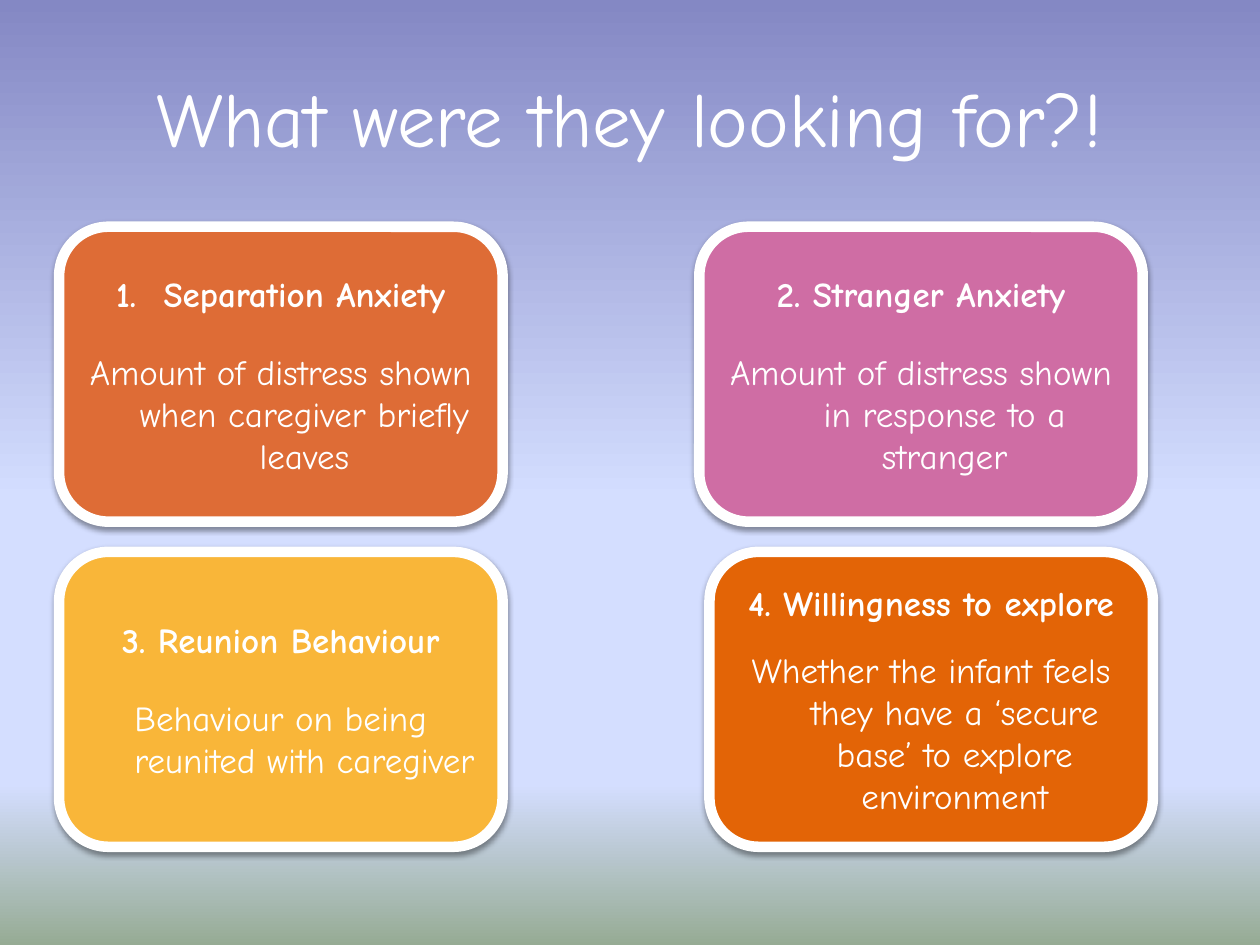
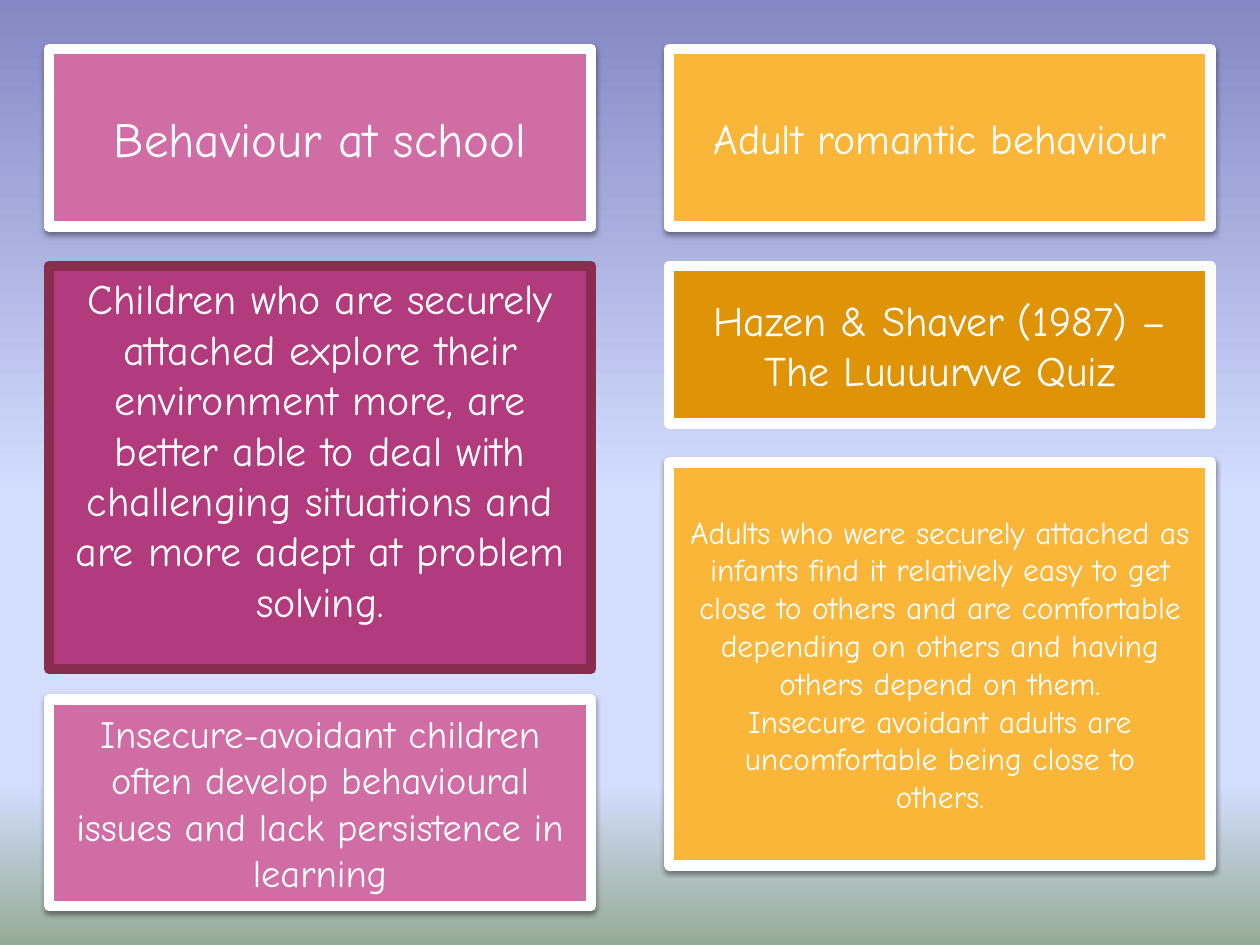
from lxml.etree import SubElement
from pptx import Presentation
from pptx.dml.color import RGBColor
from pptx.enum.shapes import MSO_SHAPE
from pptx.enum.text import MSO_ANCHOR, PP_ALIGN
from pptx.oxml.ns import qn
from pptx.util import Pt

FONT = "Comic Neue"
COLOURS = {
    "white": "FFFFFF",
    "shadow": "000000",
    "orange": "DE6C36",
    "deep orange": "E36406",
    "pink": "CF6DA4",
    "plum": "B23B7E",
    "wine": "882D4D",
    "yellow": "F9B639",
    "amber": "DF9307",
}
SKY = [(0, "8488C4"), (53, "D4DEFF"), (83, "D4DEFF"), (100, "96AB94")]

TITLE = "What were they looking for?!"
CARD_SIZE = (253.4, 168.5)
CARD_ROWS = (129.6, 315.4)
CARD_INDENT = 27
CARDS = [
    dict(left=33.8, row=0, fill="orange", heading="Separation Anxiety", numbered=True, gap=20.7,
         body="Amount of distress shown when caregiver briefly leaves"),
    dict(left=33.8, row=1, fill="yellow", heading="3. Reunion Behaviour", gap=20.7,
         body="Behaviour on being reunited with caregiver"),
    dict(left=405.4, row=1, fill="deep orange", heading="4. Willingness to explore", gap=14.3,
         body="Whether the infant feels they have a ‘secure base’ to explore environment"),
    dict(left=399.6, row=0, fill="pink", heading="2. Stranger Anxiety", gap=20.7,
         body="Amount of distress shown in response to a stranger"),
]

PANEL_TOP = 28.1
PANEL_WIDTH = 309.6
PANEL_GAP = 22.3
COLUMNS = [
    (28.1, [
        dict(height=101.5, fill="pink", size=28, lines=["Behaviour at school"]),
        dict(height=230.4, fill="plum", line="wine", size=24, shadow=False, gap=17.3, bottom_inset=24.3,
             lines=["Children who are securely attached explore their environment more, are better able "
                    "to deal with challenging situations and are more adept at problem solving."]),
        dict(height=118.1, fill="pink", size=22,
             lines=["Insecure-avoidant children often develop behavioural issues and lack persistence "
                    "in learning"]),
    ]),
    (382.3, [
        dict(height=101.5, fill="yellow", size=24, lines=["Adult romantic behaviour"]),
        dict(height=90, fill="amber", size=24, shadow=False,
             lines=["Hazen & Shaver (1987) – The Luuuurvve Quiz"]),
        dict(height=230.4, fill="yellow", size=18,
             lines=["Adults who were securely attached as infants find it relatively easy to get close to "
                    "others and are comfortable depending on others and having others depend on them.",
                    "Insecure avoidant adults are uncomfortable being close to",
                    "others."]),
    ]),
]


def colour(name):
    return RGBColor.from_string(COLOURS[name])


def add_slide(presentation):
    slide = presentation.slides.add_slide(presentation.slide_layouts[6])
    fill = slide.background.fill
    fill.gradient()
    fill.gradient_angle = 270
    stops = slide.element.find(".//" + qn("a:gsLst"))
    stops.clear()
    for percent, value in SKY:
        stop = SubElement(stops, qn("a:gs"), pos=str(percent * 1000))
        SubElement(stop, qn("a:srgbClr"), val=value)
    return slide


def add_shadow(shape):
    effects = shape.element.spPr.find(qn("a:effectLst"))
    shadow = SubElement(effects, qn("a:outerShdw"), blurRad=str(Pt(3.1)), dist=str(Pt(1.6)),
                        dir="5400000", rotWithShape="0")
    shade = SubElement(shadow, qn("a:srgbClr"), val=COLOURS["shadow"])
    SubElement(shade, qn("a:alpha"), val="38000")


def add_box(slide, preset, box, fill, line="white", shadow=True):
    shape = slide.shapes.add_shape(preset, *map(Pt, box))
    shape.fill.solid()
    shape.fill.fore_color.rgb = colour(fill)
    shape.line.color.rgb = colour(line)
    shape.line.width = Pt(6)
    shape.shadow.inherit = False
    if shadow:
        add_shadow(shape)
    return shape


def write_lines(shape, lines, size):
    frame = shape.text_frame
    frame.word_wrap = True
    frame.vertical_anchor = MSO_ANCHOR.MIDDLE
    frame.text = "\n".join(lines)
    for paragraph in frame.paragraphs:
        paragraph.alignment = PP_ALIGN.CENTER
        paragraph.font.name = FONT
        paragraph.font.size = Pt(size)
        paragraph.font.color.rgb = colour("white")
    return frame.paragraphs


def add_card(slide, card):
    box = (card["left"], CARD_ROWS[card["row"]], *CARD_SIZE)
    shape = add_box(slide, MSO_SHAPE.ROUNDED_RECTANGLE, box, card["fill"])
    heading, body = write_lines(shape, [card["heading"], card["body"]], 20)
    heading.font.bold = True
    body.space_before = Pt(card["gap"])
    for paragraph in (heading, body):
        properties = paragraph._p.get_or_add_pPr()
        properties.set("marL", str(Pt(CARD_INDENT)))
        properties.set("indent", str(-Pt(CARD_INDENT)))
    if card.get("numbered"):
        properties = heading._p.get_or_add_pPr()
        number = SubElement(properties, qn("a:buAutoNum"), type="arabicPeriod")
        properties.find(qn("a:defRPr")).addprevious(number)


def add_column(slide, left, panels):
    top = PANEL_TOP
    for panel in panels:
        box = (left, top, PANEL_WIDTH, panel["height"])
        shape = add_box(slide, MSO_SHAPE.RECTANGLE, box, panel["fill"],
                        panel.get("line", "white"), panel.get("shadow", True))
        write_lines(shape, panel["lines"], panel["size"])
        shape.text_frame.margin_bottom = Pt(panel.get("bottom_inset", 3.6))
        top += panel["height"] + panel.get("gap", PANEL_GAP)


def main():
    presentation = Presentation()
    presentation.slide_width = Pt(720)
    presentation.slide_height = Pt(540)

    signs_slide = add_slide(presentation)
    title = signs_slide.shapes.add_textbox(Pt(36), Pt(21.6), Pt(648), Pt(90))
    write_lines(title, [TITLE], 44)
    for card in CARDS:
        add_card(signs_slide, card)

    effects_slide = add_slide(presentation)
    for left, panels in COLUMNS:
        add_column(effects_slide, left, panels)

    presentation.save("out.pptx")


if __name__ == "__main__":
    main()
